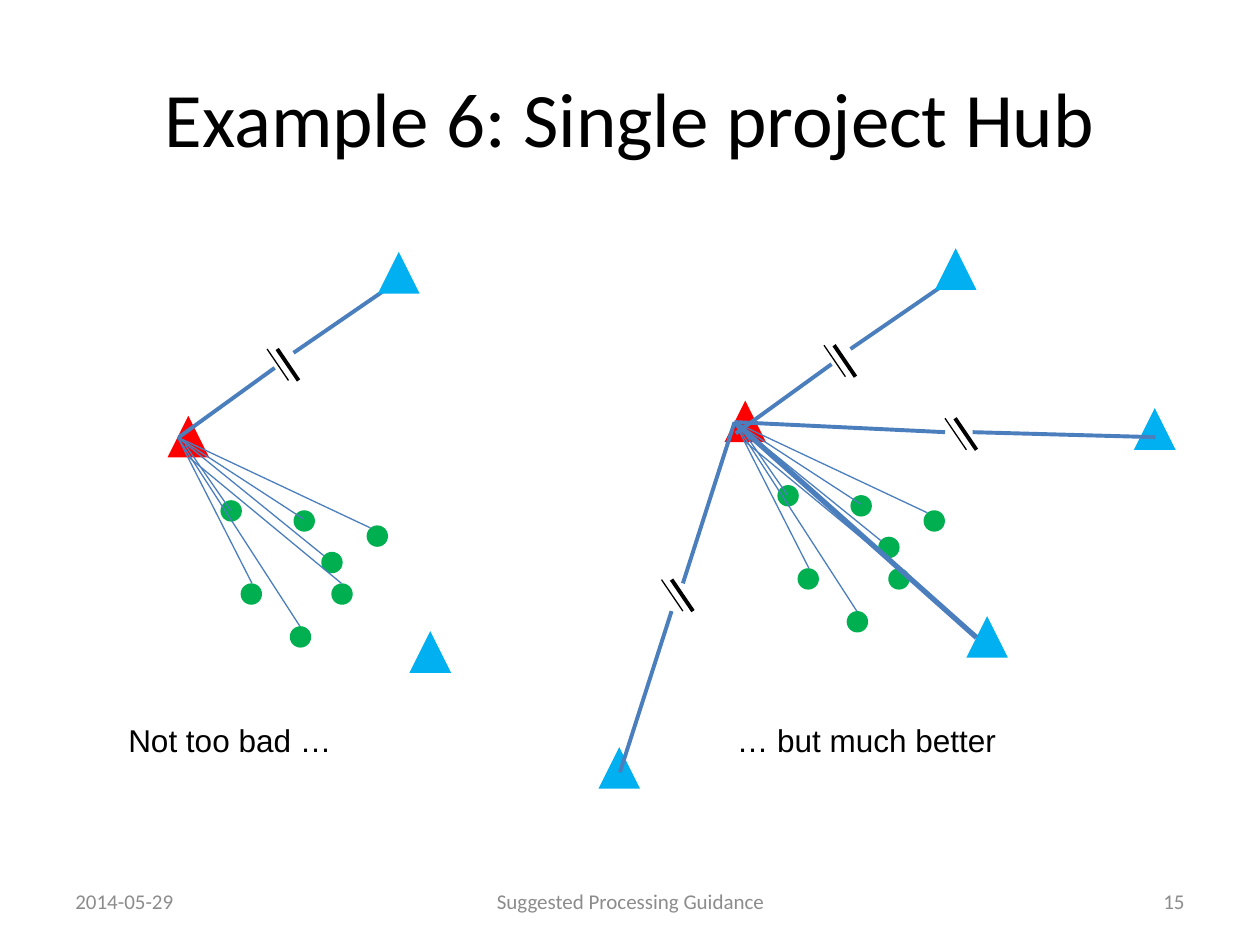
from typing import NamedTuple

from pptx import Presentation
from pptx.dml.color import RGBColor
from pptx.enum.shapes import MSO_CONNECTOR, MSO_SHAPE
from pptx.enum.text import MSO_ANCHOR as Anchor, PP_ALIGN as Align
from pptx.oxml.xmlchemy import OxmlElement
from pptx.util import Inches, Pt

BLACK = RGBColor(0x00, 0x00, 0x00)
GRAY = RGBColor(0x8C, 0x8C, 0x8C)
RED = RGBColor(0xFF, 0x00, 0x00)
GREEN = RGBColor(0x00, 0xB0, 0x50)
SKY = RGBColor(0x00, 0xB0, 0xF0)
STEEL = RGBColor(0x4B, 0x7E, 0xBC)

THIN, MEDIUM, THICK = 0.75, 2.25, 3
SITE_SIZE, STATION_SIZE = 0.33, 0.17


class Point(NamedTuple):
    x: float
    y: float

    def shift(self, dx: float, dy: float) -> "Point":
        return Point(self.x + dx, self.y + dy)


class Spoke(NamedTuple):
    start: Point
    end: Point


class Label(NamedTuple):
    text: str
    left: float
    top: float
    width: float
    height: float
    size: int
    font: str
    color: RGBColor
    align: Align = Align.LEFT
    anchor: Anchor = Anchor.MIDDLE


# Offsets from the top left of a hub
CENTER = Point(0.08, 0.17)
STATIONS = [
    Point(0.42, 0.67), Point(1, 0.75), Point(0.58, 1.33), Point(1.3, 1.33),
    Point(0.97, 1.67), Point(1.22, 1.08), Point(1.58, 0.87),
]
SPOKES = [
    Spoke(Point(0.14, 0.23), Point(0.5, 0.75)),
    Spoke(CENTER, Point(0.67, 1.33)),
    Spoke(CENTER, Point(1.08, 0.82)),
    Spoke(CENTER, Point(1.05, 1.67)),
    Spoke(Point(0.17, 0.33), Point(1.38, 1.33)),
    Spoke(CENTER, Point(1.24, 1.11)),
    Spoke(CENTER, Point(1.61, 0.89)),
]
NEAR_SITE = Point(1.92, 1.71)

LEFT_HUB, RIGHT_HUB = Point(1.33, 3.3), Point(5.75, 3.18)
NORTH_SITES = [Point(3, 2), Point(7.42, 1.97)]

LABELS = [
    Label("Example 6: Single project Hub", 0.5, 0.3, 9, 1.25, 44, "Calibri", BLACK, Align.CENTER),
    Label("Not too bad …", 0.92, 5.67, 2.83, 0.4, 18, "Arial", BLACK, anchor=Anchor.TOP),
    Label("… but much better", 5.75, 5.67, 3.42, 0.4, 18, "Arial", BLACK, anchor=Anchor.TOP),
    Label("2014-05-29", 0.5, 6.95, 2.33, 0.4, 12, "Calibri", GRAY),
    Label("Suggested Processing Guidance", 3.42, 6.95, 3.17, 0.4, 12, "Calibri", GRAY, Align.CENTER),
    Label("15", 7.17, 6.95, 2.33, 0.4, 12, "Calibri", GRAY, Align.RIGHT),
]


def draw_marker(slide, kind: MSO_SHAPE, at: Point, size: float, color: RGBColor) -> None:
    marker = slide.shapes.add_shape(kind, Inches(at.x), Inches(at.y), Inches(size), Inches(size))
    marker.shadow.inherit = False
    marker.fill.solid()
    marker.fill.fore_color.rgb = color
    marker.line.fill.background()


def draw_site(slide, at: Point, color: RGBColor = SKY) -> None:
    draw_marker(slide, MSO_SHAPE.ISOSCELES_TRIANGLE, at, SITE_SIZE, color)


def draw_line(slide, start: Point, end: Point, width: float, color: RGBColor = STEEL) -> None:
    line = slide.shapes.add_connector(
        MSO_CONNECTOR.STRAIGHT, Inches(start.x), Inches(start.y), Inches(end.x), Inches(end.y))
    line.line.color.rgb = color
    line.line.width = Pt(width)
    line._element.spPr.append(OxmlElement("a:effectLst"))


def draw_break(slide, at: Point) -> None:
    """Draw the double slash that marks a long distance."""
    for dx, width in ((0, THIN), (0.08, MEDIUM)):
        top = at.shift(dx, 0)
        draw_line(slide, top, top.shift(0.17, 0.25), width, BLACK)


def draw_cluster(slide, hub: Point) -> None:
    for station in STATIONS:
        draw_marker(slide, MSO_SHAPE.OVAL, hub.shift(*station), STATION_SIZE, GREEN)
    draw_site(slide, hub, RED)
    draw_site(slide, hub.shift(*NEAR_SITE))
    for spoke in SPOKES:
        draw_line(slide, hub.shift(*spoke.start), hub.shift(*spoke.end), THIN)


def draw_north_link(slide, site: Point) -> None:
    draw_line(slide, site.shift(-1.58, 1.47), site.shift(-0.82, 0.92), MEDIUM)
    draw_line(slide, site.shift(-0.67, 0.8), site.shift(0.13, 0.25), MEDIUM)
    draw_site(slide, site)
    draw_break(slide, site.shift(-0.88, 0.77))


def draw_label(slide, label: Label) -> None:
    box = slide.shapes.add_textbox(
        Inches(label.left), Inches(label.top), Inches(label.width), Inches(label.height))
    frame = box.text_frame
    frame.word_wrap = True
    frame.vertical_anchor = label.anchor
    paragraph = frame.paragraphs[0]
    paragraph.text = label.text
    paragraph.alignment = label.align
    paragraph.font.size = Pt(label.size)
    paragraph.font.name = label.font
    paragraph.font.color.rgb = label.color


def main() -> None:
    deck = Presentation()
    deck.slide_width, deck.slide_height = Inches(10), Inches(7.5)
    slide = deck.slides.add_slide(deck.slide_layouts[6])

    # Hubs with their stations
    for hub in (RIGHT_HUB, LEFT_HUB):
        draw_cluster(slide, hub)

    # Right hub to its near site
    center = RIGHT_HUB.shift(*CENTER)
    draw_line(slide, center, Point(7.75, 5.06), THICK)

    # Distant sites to the north
    for site in NORTH_SITES:
        draw_north_link(slide, site)

    # Distant sites to the south-west and east
    for site in (Point(4.75, 5.93), Point(9, 3.24)):
        draw_site(slide, site)
    for gap in (Point(5.25, 4.6), Point(7.5, 3.32)):
        draw_break(slide, gap)
    for start, end in (
        (center, Point(7.5, 3.43)), (Point(7.72, 3.43), Point(9.17, 3.47)),
        (center, Point(5.42, 4.63)), (Point(5.33, 4.85), Point(4.92, 6.13)),
    ):
        draw_line(slide, start, end, MEDIUM)

    # Title, captions and footer
    for label in LABELS:
        draw_label(slide, label)

    deck.save("out.pptx")


if __name__ == "__main__":
    main()
